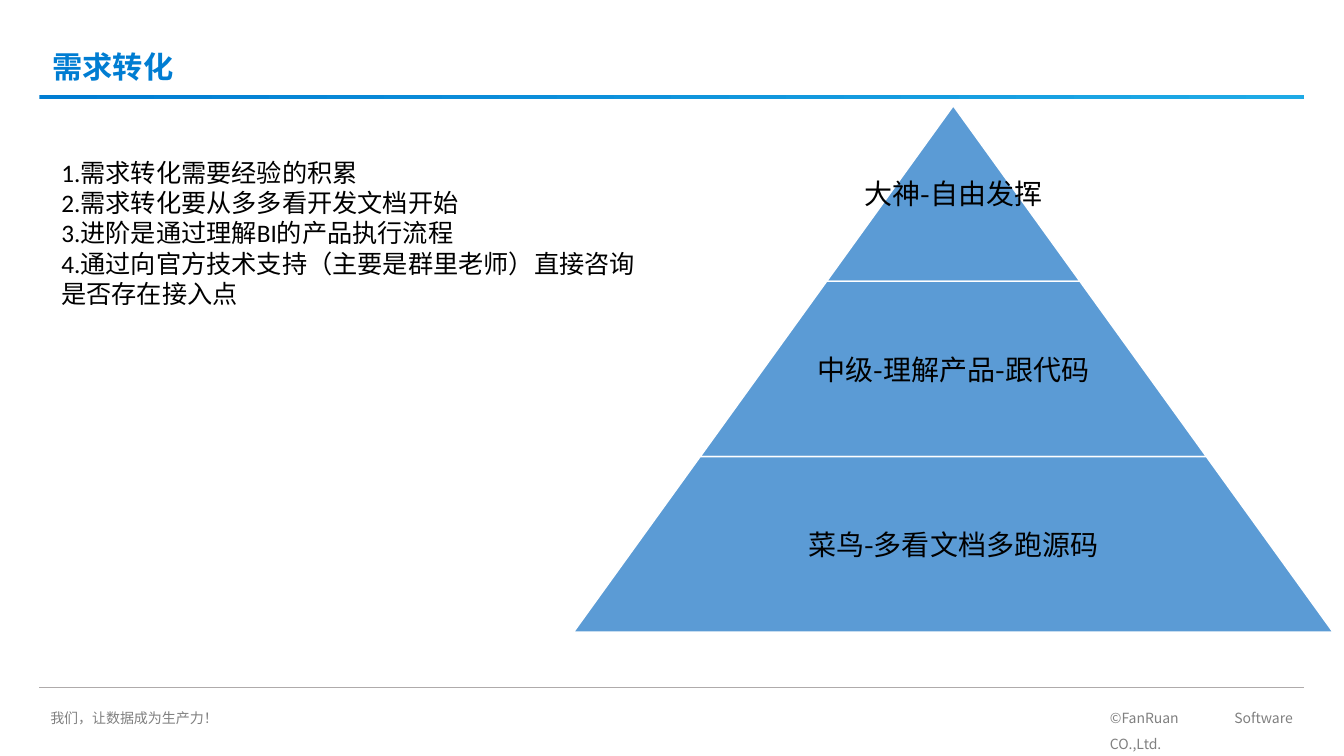
from dataclasses import dataclass

from lxml.etree import SubElement
from pptx import Presentation
from pptx.dml.color import RGBColor
from pptx.enum.shapes import MSO_CONNECTOR, MSO_SHAPE
from pptx.enum.text import MSO_ANCHOR, MSO_AUTO_SIZE, PP_ALIGN
from pptx.oxml.ns import qn
from pptx.util import Inches, Pt

CJK_FONT = "Noto Sans CJK SC"
LEFT, RIGHT = 0.39, 12.93
APEX_X, APEX_Y = 9.455, 1.05
LEVEL_HEIGHT, LEVEL_INSET = 1.74, 1.255


@dataclass(frozen=True)
class TextStyle:
    size: float
    color: str
    latin: str = CJK_FONT
    bold: bool = False
    align: PP_ALIGN = PP_ALIGN.LEFT
    spacing: float = 1.0


@dataclass(frozen=True)
class TextBlock:
    left: float
    top: float
    width: float
    height: float
    lines: tuple[str, ...]
    style: TextStyle
    wrap: bool = True
    anchor: MSO_ANCHOR = MSO_ANCHOR.TOP
    inset: float | None = None


TITLE = TextStyle(21.6, "007DD2", bold=True, spacing=0.9)
BODY = TextStyle(18, "000000", latin="Calibri")
LEVEL = TextStyle(20, "000000", align=PP_ALIGN.CENTER)
FOOTER = TextStyle(10, "808080", align=PP_ALIGN.JUSTIFY, spacing=1.5)

BLOCKS = (
    TextBlock(10.91, 6.91, 2.01, 0.33, ("©FanRuan Software CO.,Ltd.",), FOOTER),
    TextBlock(0.4, 6.91, 1.88, 0.33, ("我们，让数据成为生产力！",), FOOTER, wrap=False),
    TextBlock(0.51, 1.51, 5.91, 1.61, (
        "1.需求转化需要经验的积累",
        "2.需求转化要从多多看开发文档开始",
        "3.进阶是通过理解BI的产品执行流程",
        "4.通过向官方技术支持（主要是群里老师）直接咨询是否存在接入点",
    ), BODY),
)
LEVELS = ("大神-自由发挥", "中级-理解产品-跟代码", "菜鸟-多看文档多跑源码")


def rgb(color: str) -> RGBColor:
    return RGBColor.from_string(color)


def place(shape, left: float, top: float, width: float, height: float) -> None:
    shape.left, shape.top = Inches(left), Inches(top)
    shape.width, shape.height = Inches(width), Inches(height)


def fill_text(frame, lines: tuple[str, ...], style: TextStyle) -> None:
    for index, line in enumerate(lines):
        para = frame.add_paragraph() if index else frame.paragraphs[0]
        para.text = line
        para.alignment = style.align
        para.line_spacing = style.spacing
        font = para.font
        font.size, font.bold, font.name = Pt(style.size), style.bold, style.latin
        font.color.rgb = rgb(style.color)
        # East Asian characters need their own typeface entry
        properties = para._p.pPr.find(qn("a:defRPr"))
        SubElement(properties, qn("a:ea")).set("typeface", CJK_FONT)


def add_block(page, block: TextBlock) -> None:
    box = page.shapes.add_textbox(Inches(block.left), Inches(block.top),
                                  Inches(block.width), Inches(block.height))
    frame = box.text_frame
    frame.word_wrap = block.wrap
    frame.vertical_anchor = block.anchor
    if block.inset is not None:
        frame.margin_left = frame.margin_right = Inches(block.inset)
        frame.margin_top = frame.margin_bottom = Inches(block.inset)
    fill_text(frame, block.lines, block.style)


def add_title(page, text: str) -> None:
    title = page.shapes.title
    place(title, 0.42, 0.45, 10.88, 0.47)
    frame = title.text_frame
    frame.auto_size = MSO_AUTO_SIZE.NONE
    frame.vertical_anchor = MSO_ANCHOR.MIDDLE
    fill_text(frame, (text,), TITLE)


def add_rules(page) -> None:
    bar = page.shapes.add_shape(MSO_SHAPE.RECTANGLE, Inches(LEFT), Inches(0.94),
                                Inches(RIGHT - LEFT), Inches(0.04))
    bar.shadow.inherit = False
    bar.line.fill.background()
    bar.fill.gradient()
    bar.fill.gradient_angle = 0
    for stop, color in zip(bar.fill.gradient_stops, ("007DD2", "1EAAE6")):
        stop.color.rgb = rgb(color)

    rule = page.shapes.add_connector(MSO_CONNECTOR.STRAIGHT, Inches(LEFT), Inches(6.82),
                                     Inches(RIGHT), Inches(6.82))
    rule.line.color.rgb = rgb("AFABAB")
    rule.line.width = Pt(0.5)
    SubElement(rule._element.spPr, qn("a:effectLst"))


def add_level(page, index: int, label: str) -> None:
    half_width = LEVEL_INSET * (index + 1)
    left, top = APEX_X - half_width, APEX_Y + LEVEL_HEIGHT * index
    level = page.shapes.add_shape(MSO_SHAPE.TRAPEZOID, Inches(left), Inches(top),
                                  Inches(2 * half_width), Inches(LEVEL_HEIGHT))
    level.adjustments[0] = LEVEL_INSET / LEVEL_HEIGHT
    level.shadow.inherit = False
    level.fill.solid()
    level.fill.fore_color.rgb = rgb("5B9BD5")
    level.line.color.rgb = rgb("FFFFFF")
    level.line.width = Pt(1)
    add_block(page, TextBlock(left, top, 2 * half_width, LEVEL_HEIGHT, (label,), LEVEL,
                              anchor=MSO_ANCHOR.MIDDLE, inset=0.03))


def main() -> None:
    deck = Presentation()
    deck.slide_width, deck.slide_height = Inches(13.33), Inches(7.5)
    page = deck.slides.add_slide(deck.slide_layouts[5])

    # Header and footer rules, title
    add_rules(page)
    add_title(page, "需求转化")

    # Footer and body text
    for block in BLOCKS:
        add_block(page, block)

    # Pyramid, from the tip down
    for index, label in enumerate(LEVELS):
        add_level(page, index, label)

    deck.save("out.pptx")


if __name__ == "__main__":
    main()
